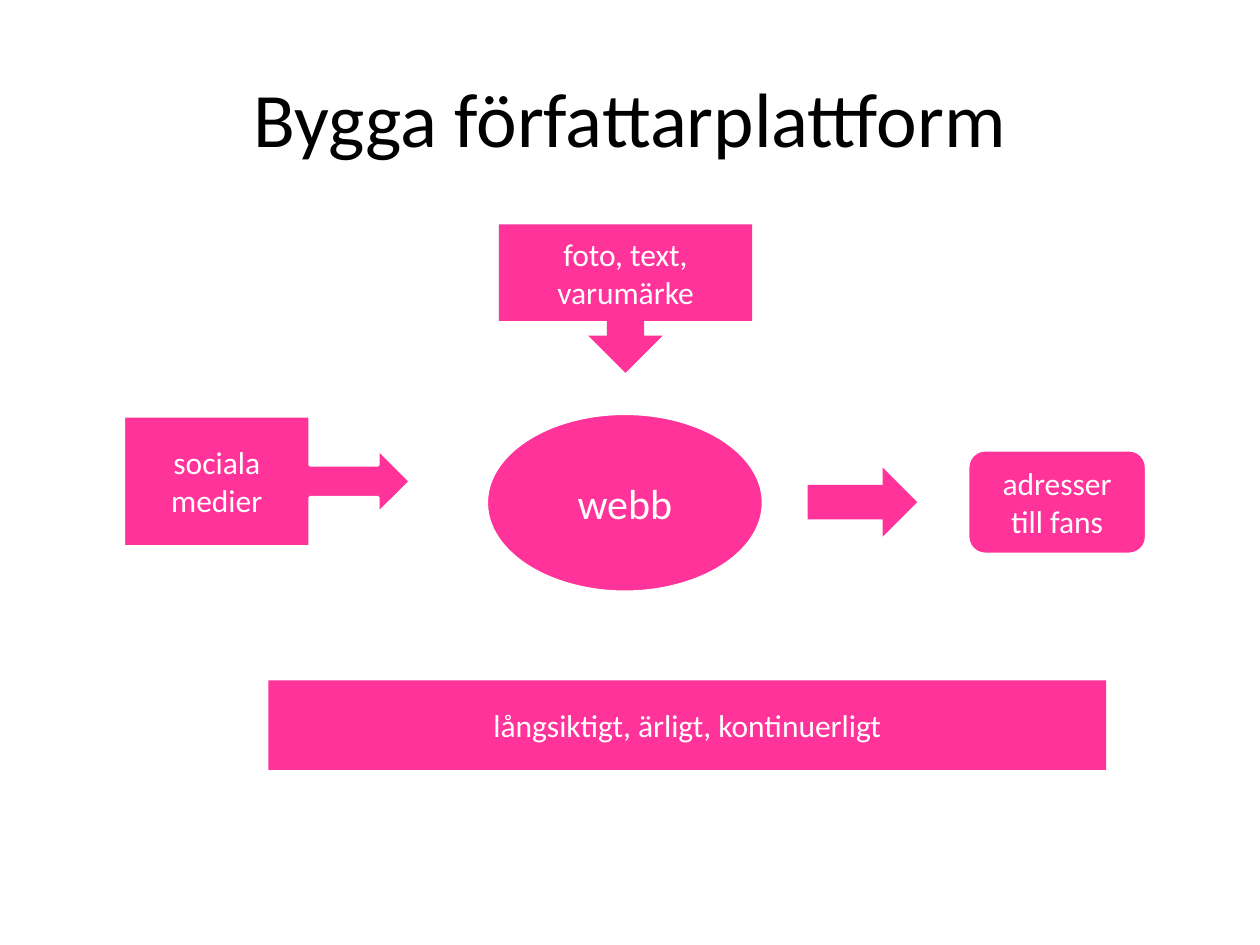
from pptx import Presentation
from pptx.dml.color import RGBColor
from pptx.enum.shapes import MSO_SHAPE
from pptx.enum.text import MSO_ANCHOR, PP_ALIGN
from pptx.util import Inches, Pt

OVAL = MSO_SHAPE.OVAL
ARROW = MSO_SHAPE.RIGHT_ARROW
ROUND = MSO_SHAPE.ROUNDED_RECTANGLE
RIGHT = MSO_SHAPE.RIGHT_ARROW_CALLOUT
DOWN = MSO_SHAPE.DOWN_ARROW_CALLOUT
RECT = MSO_SHAPE.RECTANGLE
MIDDLE = MSO_ANCHOR.MIDDLE
CENTER = PP_ALIGN.CENTER


def paint(value):
    return RGBColor.from_string(value)


class Deck:
    """Holds the style and the current slide."""

    face = "Calibri"
    pink = "FF3399"
    white = "FFFFFF"
    black = "000000"

    def __init__(self, slide):
        self.slide = slide

    def label(self, shape, text, size, color):
        frame = shape.text_frame
        frame.word_wrap = True
        frame.vertical_anchor = MIDDLE
        frame.text = text
        line = frame.paragraphs[0]
        line.alignment = CENTER
        line.font.name = self.face
        line.font.size = Pt(size)
        line.font.color.rgb = paint(color)

    def title(self, text, left, top, width, height):
        shape = self.slide.shapes.title
        shape.left, shape.top = Inches(left), Inches(top)
        shape.width, shape.height = Inches(width), Inches(height)
        self.label(shape, text, 44, self.black)

    def block(self, kind, box, text="", size=18, edge=False):
        shape = self.slide.shapes.add_shape(kind, *map(Inches, box))
        shape.shadow.inherit = False
        shape.fill.solid()
        shape.fill.fore_color.rgb = paint(self.pink)
        if edge:
            shape.line.color.rgb = paint(self.white)
            shape.line.width = Pt(2)
        else:
            shape.line.fill.background()
        if text:
            self.label(shape, text, size, self.white)


def main():
    show = Presentation()
    show.slide_width, show.slide_height = Inches(10), Inches(7.5)
    deck = Deck(show.slides.add_slide(show.slide_layouts[5]))
    deck.title("Bygga författarplattform", 0.5, 0.3, 9, 1.25)
    deck.block(OVAL, (3.86, 3.28, 2.2, 1.42), "webb", size=24, edge=True)
    deck.block(ARROW, (6.41, 3.71, 0.87, 0.55))
    deck.block(ROUND, (7.68, 3.57, 1.42, 0.83), "adresser till fans", edge=True)
    deck.block(RIGHT, (0.98, 3.3, 2.28, 1.04), "sociala medier", edge=True)
    deck.block(DOWN, (3.96, 1.78, 2.01, 1.18), "foto, text, varumärke")
    deck.block(RECT, (2.13, 5.4, 6.65, 0.71), "långsiktigt, ärligt, kontinuerligt")
    show.save("out.pptx")


if __name__ == "__main__":
    main()
